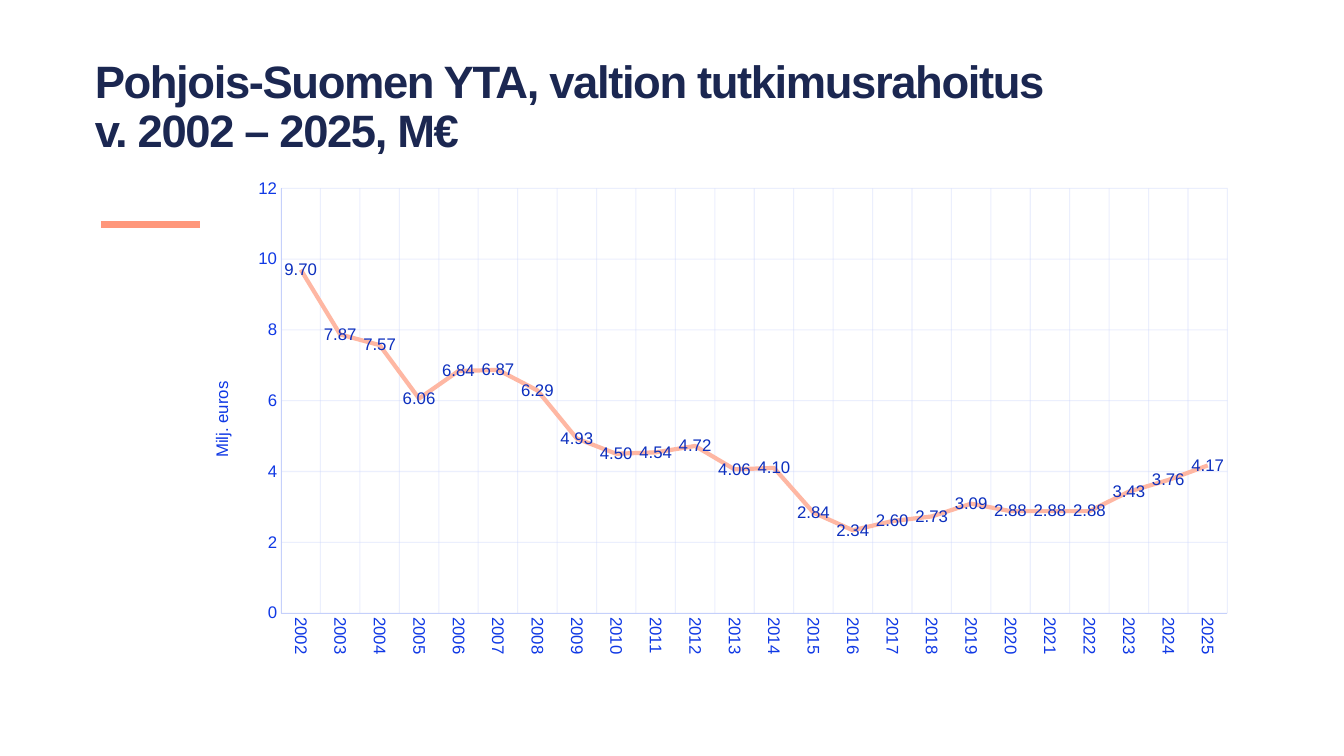
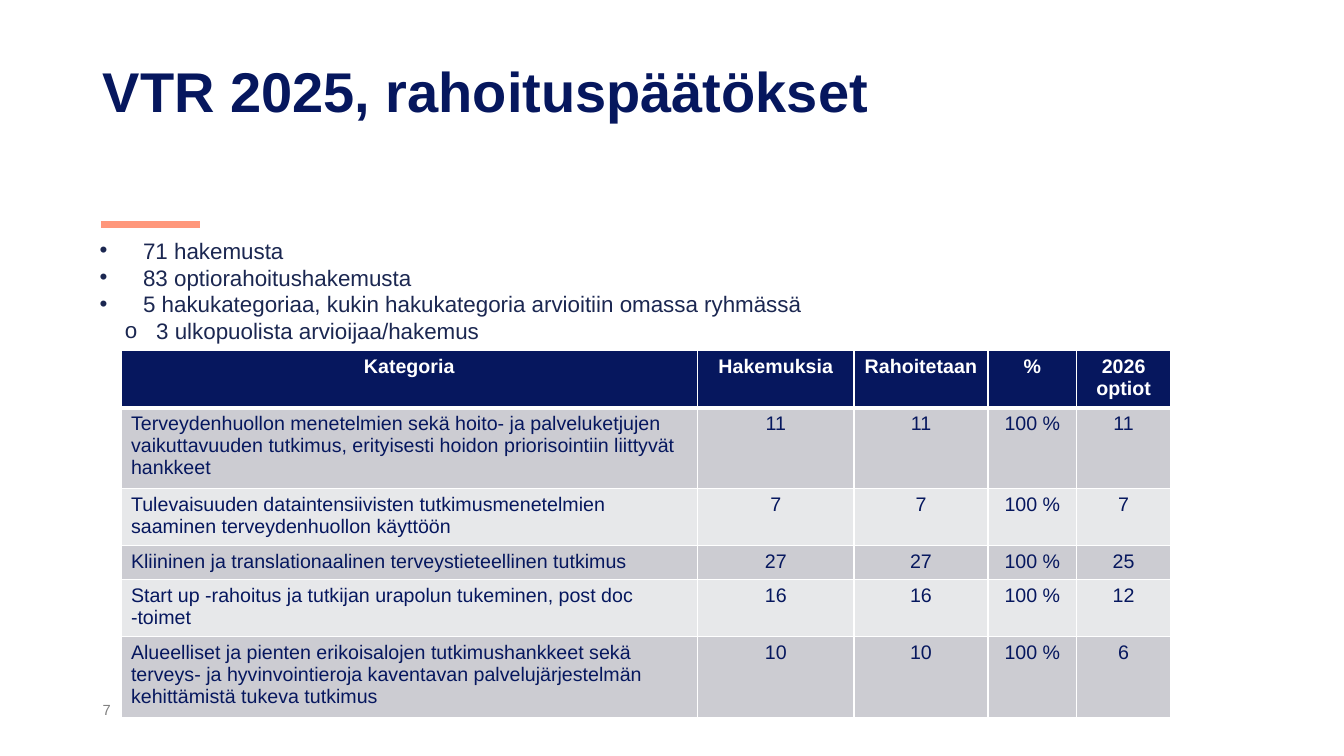
from lxml import etree
from pptx import Presentation
from pptx.chart.data import CategoryChartData
from pptx.dml.color import RGBColor
from pptx.enum.chart import XL_CHART_TYPE, XL_LABEL_POSITION, XL_TICK_MARK
from pptx.enum.shapes import MSO_CONNECTOR
from pptx.enum.text import MSO_ANCHOR, MSO_AUTO_SIZE, PP_ALIGN
from pptx.oxml.ns import qn
from pptx.util import Inches, Pt

LINE, STRAIGHT = XL_CHART_TYPE.LINE, MSO_CONNECTOR.STRAIGHT
MID, NO_TICK = XL_LABEL_POSITION.CENTER, XL_TICK_MARK.NONE
BOTTOM, MIDDLE = MSO_ANCHOR.BOTTOM, MSO_ANCHOR.MIDDLE
LEFT, CENTER = PP_ALIGN.LEFT, PP_ALIGN.CENTER
NO_FIT = MSO_AUTO_SIZE.NONE


class Theme:
    face = "Arial"
    navy, ink, blue, label = "06175E", "1B2751", "0F38E5", "0C2FBE"
    coral, peach, grid = "FF977B", "FEB7A3", "C5D0FB"
    white, gray, bands = "FFFFFF", "808080", ("E7E8EA", "CCCCD2")
    body, cell, axis, foot = 16, 14, 12, 10.5


deck = Presentation()
deck.slide_width, deck.slide_height = Inches(13.33), Inches(7.5)
WIDE, HIGH = deck.slide_width / 100, deck.slide_height / 100


def box(left, top, width, height):
    """Turn percent of the slide into lengths."""
    return [round(share * unit) for share, unit in
            zip((left, top, width, height), (WIDE, HIGH, WIDE, HIGH))]


def look(font, size, hue, bold=False):
    form = {"name": Theme.face, "size": Pt(size), "bold": bold}
    for key, value in form.items():
        setattr(font, key, value)
    font.color.rgb = RGBColor.from_string(hue)


# Slides and titles
heads = [
    ("Pohjois-Suomen YTA, valtion tutkimusrahoitus\vv. 2002 – 2025, M€",
     (6.3, 0.4, 76.14, 21.07), 32.4, Theme.ink, -100),
    ("VTR 2025, rahoituspäätökset",
     (6.9, 6.8, 86.27, 10.4), 40, Theme.navy, 0),
]
layout = deck.slide_layouts[5]
pages = []
for text, area, size, hue, gap in heads:
    page = deck.slides.add_slide(layout)
    title = page.shapes.title
    title.left, title.top, title.width, title.height = box(*area)
    frame = title.text_frame
    frame.text = text
    for key, value in {"word_wrap": True, "auto_size": NO_FIT,
                       "vertical_anchor": BOTTOM}.items():
        setattr(frame, key, value)
    para = frame.paragraphs[0]
    para.alignment, para.line_spacing = LEFT, 0.9
    for run in para.runs:
        look(run.font, size, hue, True)
        run._r.get_or_add_rPr().set("spc", str(gap))
    pages.append(page)
trend, grants = pages

# Accent bar, shared through the layout
left, top, width, _ = box(7.5, 29.73, 7.35, 0)
bar = trend.shapes.add_connector(STRAIGHT, left, top, left + width, top)
bar.line.width = Pt(5)
bar.line.color.rgb = RGBColor.from_string(Theme.coral)
etree.SubElement(bar.element.spPr, qn("a:effectLst"))
layout.shapes.element.append(bar.element)

# Funding chart
funds = [9.7, 7.87, 7.57, 6.06, 6.84, 6.87, 6.29, 4.93, 4.5, 4.54, 4.72, 4.06,
         4.1, 2.84, 2.34, 2.6, 2.73, 3.09, 2.88, 2.88, 2.88, 3.43, 3.76, 4.17]
data = CategoryChartData()
data.categories = [str(year) for year in range(2002, 2026)]
data.add_series("Series 1", funds)
chart = trend.shapes.add_chart(LINE, *box(13.95, 21.6, 77.42, 66.13), data).chart
chart.has_title = chart.has_legend = False
look(chart.font, Theme.axis, Theme.blue)

cats, vals = chart.category_axis, chart.value_axis
for axis in (cats, vals):
    form = {"major_tick_mark": NO_TICK, "minor_tick_mark": NO_TICK,
            "has_major_gridlines": True}
    for key, value in form.items():
        setattr(axis, key, value)
    look(axis.tick_labels.font, Theme.axis, Theme.blue)
    for line, weight in ((axis.format.line, 0.25),
                         (axis.major_gridlines.format.line, 0.75)):
        line.width = Pt(weight)
        line.color.rgb = RGBColor.from_string(Theme.grid)
for grid in chart.element.iter(qn("c:majorGridlines")):
    for tint in grid.iter(qn("a:srgbClr")):
        etree.SubElement(tint, qn("a:alpha"), val="32000")
turn = cats._element.find(qn("c:txPr")).find(qn("a:bodyPr"))
turn.set("rot", "5400000")
turn.set("vert", "horz")

for key, value in {"minimum_scale": 0, "maximum_scale": 12,
                   "major_unit": 2}.items():
    setattr(vals, key, value)
vals.tick_labels.number_format = "General"
vals.tick_labels.number_format_is_linked = False
name = vals.axis_title.text_frame
name.text = "Milj. euros"
look(name.paragraphs[0].runs[0].font, Theme.axis, Theme.blue)
turn = name._txBody.find(qn("a:bodyPr"))
turn.set("rot", "-5400000")
turn.set("vert", "horz")

plot = chart.plots[0]
plot.vary_by_categories = False
series = plot.series[0]
series.smooth = False
series.format.line.width = Pt(3)
series.format.line.color.rgb = RGBColor.from_string(Theme.peach)
tags = series.data_labels
for key, value in {"show_value": True, "position": MID, "number_format": "0.00",
                   "number_format_is_linked": False}.items():
    setattr(tags, key, value)
look(tags.font, Theme.axis, Theme.label)

# Fixed places of the plot and the axis title
area = next(chart.element.iter(qn("c:plotArea")))
places = [
    (area, 0, {"layoutTarget": "inner", "xMode": "edge", "yMode": "edge",
               "x": 0.09, "y": 0.05, "w": 0.91, "h": 0.85}),
    (vals.axis_title._element, 1,
     {"xMode": "edge", "yMode": "edge", "x": 0.02, "y": 0.43}),
]
for node, spot, form in places:
    for old in node.findall(qn("c:layout")):
        node.remove(old)
    rule = etree.Element(qn("c:layout"))
    manual = etree.SubElement(rule, qn("c:manualLayout"))
    for key, value in form.items():
        etree.SubElement(manual, qn("c:" + key), val=str(value))
    node.insert(spot, rule)

# Bullets: text, mark, margin, hang
points = [
    ("71 hakemusta", "•", 0.43, 0.43),
    ("83 optiorahoitushakemusta", "•", 0.43, 0.43),
    ("5 hakukategoriaa, kukin hakukategoria arvioitiin omassa ryhmässä",
     "•", 0.43, 0.43),
    ("3 ulkopuolista arvioijaa/hakemus", "o", 0.56, 0.31),
]
frame = grants.shapes.add_textbox(*box(6.68, 30.67, 84.55, 15.73)).text_frame
frame.word_wrap = True
frame.text = "\n".join(point[0] for point in points)
for para, (_, mark, margin, hang) in zip(frame.paragraphs, points):
    props = para._p.get_or_add_pPr()
    props.set("marL", str(Inches(margin)))
    props.set("indent", str(-Inches(hang)))
    etree.SubElement(props, qn("a:buFont"), typeface=Theme.face)
    etree.SubElement(props, qn("a:buChar"), char=mark)
    look(para.runs[0].font, Theme.body, Theme.ink)

# Page number
frame = grants.shapes.add_textbox(*box(6.9, 91.87, 22.5, 3.87)).text_frame
frame.word_wrap, frame.vertical_anchor = True, MIDDLE
frame.text = "7"
look(frame.paragraphs[0].runs[0].font, Theme.foot, Theme.gray)

# Table of decisions
rows = [
    ("Kategoria", "Hakemuksia", "Rahoitetaan", "%", "2026 optiot"),
    ("Terveydenhuollon menetelmien sekä hoito- ja palveluketjujen "
     "vaikuttavuuden tutkimus, erityisesti hoidon priorisointiin liittyvät "
     "hankkeet", "11", "11", "100 %", "11"),
    ("Tulevaisuuden dataintensiivisten tutkimusmenetelmien saaminen "
     "terveydenhuollon käyttöön", "7", "7", "100 %", "7"),
    ("Kliininen ja translationaalinen terveystieteellinen tutkimus",
     "27", "27", "100 %", "25"),
    ("Start up -rahoitus ja tutkijan urapolun tukeminen, post doc -toimet",
     "16", "16", "100 %", "12"),
    ("Alueelliset ja pienten erikoisalojen tutkimushankkeet sekä terveys- ja "
     "hyvinvointieroja kaventavan palvelujärjestelmän kehittämistä tukeva "
     "tutkimus", "10", "10", "100 %", "6"),
]
wide = (42.91, 11.63, 9.98, 6.6, 6.98)
high = (6.67, 10.53, 7.33, 4.27, 7.33, 10.53)
table = grants.shapes.add_table(
    len(rows), len(wide), *box(9, 46.4, sum(wide), sum(high))).table
table.horz_banding = False
for col, share in zip(table.columns, wide):
    col.width = round(share * WIDE)
for row, share in zip(table.rows, high):
    row.height = round(share * HIGH)

for r, row in enumerate(rows):
    head = r == 0
    fill = Theme.navy if head else Theme.bands[r % 2]
    for c, text in enumerate(row):
        cell = table.cell(r, c)
        cell.text = text
        para = cell.text_frame.paragraphs[0]
        para.alignment = CENTER if head or c else LEFT
        look(para.runs[0].font, Theme.cell,
             Theme.white if head else Theme.navy, head)
        props = cell._tc.get_or_add_tcPr()
        edges = {"lnL": 1, "lnR": 1, "lnT": 3 if r == 1 else 1,
                 "lnB": 3 if head else 1}
        for edge, weight in edges.items():
            line = etree.SubElement(props, qn("a:" + edge), w=str(Pt(weight)))
            solid = etree.SubElement(line, qn("a:solidFill"))
            etree.SubElement(solid, qn("a:srgbClr"), val=Theme.white)
        cell.fill.solid()
        cell.fill.fore_color.rgb = RGBColor.from_string(fill)

deck.save("out.pptx")
